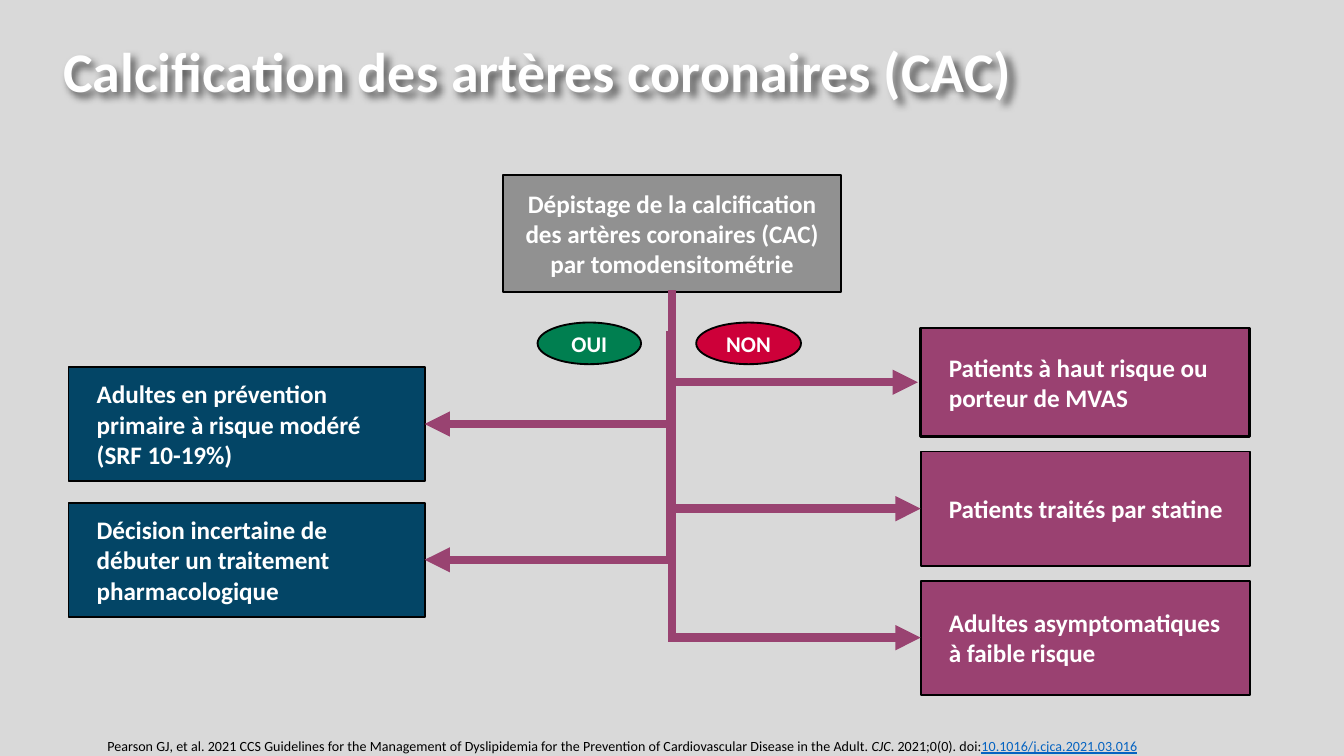
import pptx
import pptx.util
import pptx.dml.color
import pptx.enum.shapes
import pptx.enum.text
import pptx.oxml
import pptx.oxml.ns
from lxml import etree

Inches = pptx.util.Inches
Pt = pptx.util.Pt
RGBColor = pptx.dml.color.RGBColor
SHAPE = pptx.enum.shapes.MSO_SHAPE
ALIGN = pptx.enum.text.PP_ALIGN
qn = pptx.oxml.ns.qn

BACKGROUND = RGBColor(0xD9, 0xD9, 0xD9)
WHITE = RGBColor(0xFF, 0xFF, 0xFF)
BLACK = RGBColor(0x00, 0x00, 0x00)
GREY = RGBColor(0x91, 0x91, 0x91)
NAVY = RGBColor(0x03, 0x45, 0x66)
PLUM = RGBColor(0x9A, 0x41, 0x71)
ARROW = RGBColor(0x99, 0x43, 0x71)
RED = RGBColor(0xCD, 0x00, 0x39)
GREEN = RGBColor(0x00, 0x7F, 0x50)
LINK = RGBColor(0x05, 0x63, 0xC1)

TITLE_SHADOW = (
    '<a:effectLst %s><a:outerShdw blurRad="50800" dist="38100" dir="2700000" '
    'algn="tl" rotWithShape="0"><a:srgbClr val="000000"><a:alpha val="60000"/>'
    '</a:srgbClr></a:outerShdw></a:effectLst>' % pptx.oxml.ns.nsdecls("a"))


class FlowSlide:
    """Holds the style and the slide being built."""
    font_name = "Calibri"
    box_size = 13.5

    def __init__(self, presentation):
        self.slide = presentation.slides.add_slide(presentation.slide_layouts[5])
        fill = self.slide.background.fill
        fill.solid()
        fill.fore_color.rgb = BACKGROUND

    def run(self, paragraph, text, size, color, bold=False, italic=False, underline=False):
        run = paragraph.add_run()
        run.text = text
        font = run.font
        font.name = self.font_name
        font.size = Pt(size)
        font.color.rgb = color
        font.bold = bold
        font.italic = italic
        font.underline = underline

    def frame(self, shape, margins):
        frame = shape.text_frame
        frame.word_wrap = True
        frame.auto_size = pptx.enum.text.MSO_AUTO_SIZE.NONE
        frame.vertical_anchor = pptx.enum.text.MSO_ANCHOR.MIDDLE
        (frame.margin_left, frame.margin_top,
         frame.margin_right, frame.margin_bottom) = map(Inches, margins)
        return frame.paragraphs[0]

    def title(self, text, left, top, width, height):
        title = self.slide.shapes.title
        title.left, title.top = Inches(left), Inches(top)
        title.width, title.height = Inches(width), Inches(height)
        title.fill.background()
        title._element.spPr.append(pptx.oxml.parse_xml(TITLE_SHADOW))
        paragraph = self.frame(title, (0.01, 0.05, 0, 0.05))
        paragraph.alignment = ALIGN.LEFT
        paragraph.line_spacing = 0.8
        self.run(paragraph, text, 30, WHITE, bold=True)

    def box(self, kind, text, place, fill, size=box_size, line=1,
            align=ALIGN.LEFT, margins=(0.21, 0.05, 0.1, 0.05)):
        box = self.slide.shapes.add_shape(kind, *map(Inches, place))
        box.shadow.inherit = False
        box.fill.solid()
        box.fill.fore_color.rgb = fill
        box.line.color.rgb = BLACK
        box.line.width = Pt(line)
        paragraph = self.frame(box, margins)
        paragraph.alignment = align
        self.run(paragraph, text, size, WHITE, bold=True)
        return box

    def centred(self, kind, text, place, fill, size=box_size):
        return self.box(kind, text, place, fill, size, align=ALIGN.CENTER,
                        margins=(0.1, 0.05, 0.1, 0.05))

    def branch(self, x, y, end_x, end_y):
        """Arrow that runs down from (x, y), then sideways to (end_x, end_y)."""
        drop, reach = end_y - y, abs(end_x - x)
        left = (x + end_x - drop) / 2
        top = (y + end_y - reach) / 2
        rightward = end_x > x
        start, stop = (left + drop, left) if rightward else (left, left + drop)
        arrow = self.slide.shapes.add_connector(
            pptx.enum.shapes.MSO_CONNECTOR.ELBOW,
            Inches(start), Inches(top), Inches(stop), Inches(top + reach))
        arrow.line.color.rgb = ARROW
        arrow.line.width = Pt(4.5)
        properties = arrow._element.spPr
        properties.find(qn("a:xfrm")).set("rot", str((270 if rightward else 90) * 60000))
        properties.find(qn("a:prstGeom")).set("prst", "bentConnector2")
        outline = properties.find(qn("a:ln"))
        etree.SubElement(outline, qn("a:miter"), lim="800000")
        etree.SubElement(outline, qn("a:tailEnd"), type="triangle")
        etree.SubElement(properties, qn("a:effectLst"))

    def citation(self, place, parts):
        note = self.slide.shapes.add_textbox(*map(Inches, place))
        note.text_frame.word_wrap = True
        for text, color, style in parts:
            self.run(note.text_frame.paragraphs[0], text, 7.5, color, **style)


def main():
    presentation = pptx.Presentation()
    presentation.slide_width = Inches(10)
    presentation.slide_height = Inches(10 * 9 / 16)
    flow = FlowSlide(presentation)
    flow.title("Calcification des artères coronaires (CAC)", 0.46, 0.23, 8.83, 0.68)

    # Screening question
    screening = flow.centred(
        SHAPE.ROUNDED_RECTANGLE,
        "Dépistage de la calcification des artères coronaires (CAC) par tomodensitométrie",
        (3.74, 1.3, 2.52, 0.87), GREY)
    screening.adjustments[0] = 0

    # Patients to screen: text, box top, margin above and below, branch start
    left, width, height = 0.51, 2.65, 0.85
    for text, top, pad, start in (
            ("Adultes en prévention primaire à risque modéré (SRF 10-19%)",
             2.73, 0.1, (5, 2.16)),
            ("Décision incertaine de débuter un traitement pharmacologique",
             3.74, 0.05, (4.99, 2.46))):
        flow.box(SHAPE.RECTANGLE, text, (left, top, width, height), NAVY,
                 margins=(0.21, pad, 0.1, pad))
        flow.branch(*start, left + width, top + height / 2)

    # Patients not to screen: text, box top, height, outline, arrow tip
    left, width = 6.85, 2.45
    for text, top, height, line, tip in (
            ("Patients à haut risque ou porteur de MVAS", 2.44, 0.81, 1.5, 6.83),
            ("Patients traités par statine", 3.36, 0.85, 1, left),
            ("Adultes asymptomatiques à faible risque", 4.32, 0.85, 1, left)):
        flow.box(SHAPE.RECTANGLE, text, (left, top, width, height), PLUM, line=line)
        flow.branch(5, 2.16, tip, top + height / 2)

    # Answers
    flow.centred(SHAPE.OVAL, "NON", (5.18, 2.4, 0.78, 0.31), RED, 12)
    flow.centred(SHAPE.OVAL, "OUI", (4, 2.4, 0.77, 0.31), GREEN, 12)

    # Source
    flow.citation((0.7, 5.44, 8.32, 0.23), (
        ("Pearson GJ, et al. 2021 CCS Guidelines for the Management of Dyslipidemia for "
         "the Prevention of Cardiovascular Disease in the Adult. ", BLACK, {}),
        ("CJC", BLACK, {"italic": True}),
        (". 2021;0(0). doi:", BLACK, {}),
        ("10.1016/j.cjca.2021.03.016", LINK, {"underline": True})))

    presentation.save("out.pptx")


if __name__ == "__main__":
    main()
